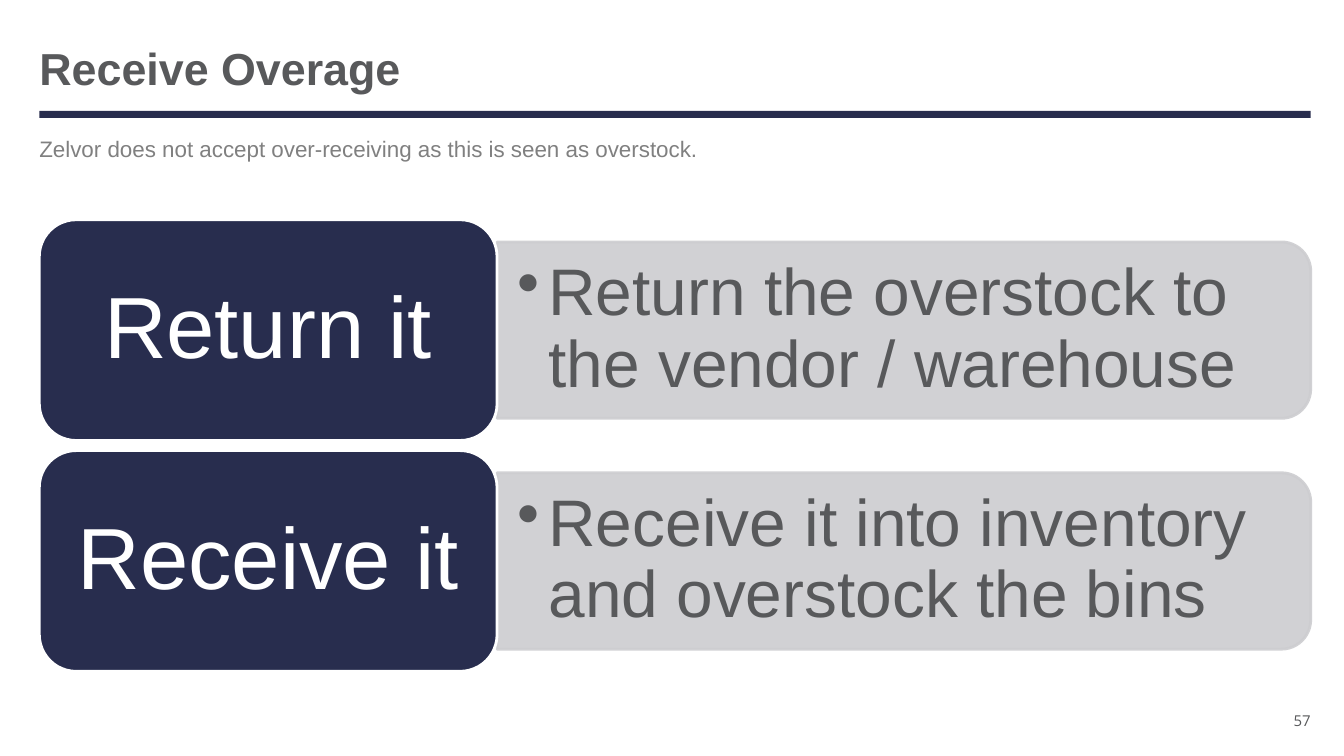
from lxml.etree import SubElement
from pptx import Presentation
from pptx.dml.color import RGBColor
from pptx.enum.shapes import MSO_SHAPE as Preset
from pptx.enum.text import MSO_ANCHOR as Anchor, PP_ALIGN as Align
from pptx.oxml.ns import qn
from pptx.util import Inches, Pt

TITLE = "Receive Overage"
SUBTITLE = "Zelvor does not accept over-receiving as this is seen as overstock."
PAGE = "57"
OPTIONS = [
    ("Return it", "Return the overstock to the vendor / warehouse"),
    ("Receive it", "Receive it into inventory and overstock the bins"),
]

NAVY, SLATE, GREY, SILVER, WHITE = "282D4E", "58595B", "808080", "CDCDD0", "FFFFFF"
LEFT, WIDTH = 0.39, 12.61
FIRST_TOP, PITCH = 2.18, 2.29
CHOICE_W, CHOICE_H = 4.54, 2.19
BAND_W, BAND_H = 8.07, 1.75
DETAIL_W, DETAIL_H = 7.98, 1.58

TITLE_FORMAT = {"size": Pt(32), "name": "Arial", "bold": True}
SUBTITLE_FORMAT = {"size": Pt(16), "name": "Arial"}
PAGE_FORMAT = {"size": Pt(10.7), "name": "Open Sans"}
CHOICE_FORMAT = {"size": Pt(62), "name": "Arial"}
DETAIL_FORMAT = {"size": Pt(47), "name": "Arial"}


def paint(color_format, color):
    color_format.rgb = RGBColor.from_string(color)


def write(shape, text, font, color, inset=(0, 0), anchor=Anchor.MIDDLE, **layout):
    frame = shape.text_frame
    across, down = map(Inches, inset)
    margins = {"margin_left": across, "margin_right": across,
               "margin_top": down, "margin_bottom": down}
    for key, value in {"word_wrap": True, "vertical_anchor": anchor, **margins}.items():
        setattr(frame, key, value)
    paragraph = frame.paragraphs[0]
    for key, value in {"alignment": Align.LEFT, **layout}.items():
        setattr(paragraph, key, value)
    run = paragraph.add_run()
    run.text = text
    for key, value in font.items():
        setattr(run.font, key, value)
    paint(run.font.color, color)
    return paragraph


def add_box(*box):
    return slide.shapes.add_textbox(*map(Inches, box))


def add_block(preset, box, fill, line=None):
    block = slide.shapes.add_shape(preset, *map(Inches, box))
    block.shadow.inherit = False
    block.fill.solid()
    paint(block.fill.fore_color, fill)
    if line:
        block.line.width = Pt(2)
        paint(block.line.color, line)
    else:
        block.line.fill.background()
    return block


def add_band(center):
    left = LEFT + CHOICE_W + (BAND_W - BAND_H) / 2
    box = (left, center - BAND_W / 2, BAND_H, BAND_W)
    band = add_block(Preset.ROUND_2_SAME_RECTANGLE, box, SILVER, SILVER)
    band.rotation = 90
    for tint in band._element.spPr.iter(qn("a:srgbClr")):
        SubElement(tint, qn("a:alpha"), val="90000")


def add_detail(center, text):
    box = add_box(LEFT + CHOICE_W, center - DETAIL_H / 2, DETAIL_W, DETAIL_H)
    paragraph = write(box, text, DETAIL_FORMAT, SLATE, (0.2, 0.1), line_spacing=0.9)
    indents = paragraph._p.get_or_add_pPr()
    indents.set("marL", str(Inches(0.31)))
    indents.set("indent", str(Inches(-0.31)))
    SubElement(indents, qn("a:buChar"), char="•")


deck = Presentation()
deck.slide_width, deck.slide_height = Inches(13.33), Inches(7.5)
slide = deck.slides.add_slide(deck.slide_layouts[6])

add_block(Preset.RECTANGLE, (LEFT, 1.1, WIDTH, 0.07), NAVY)
write(add_box(LEFT, 0.41, WIDTH, 0.61), TITLE, TITLE_FORMAT, SLATE, (0, 0.05),
      line_spacing=0.85)
write(add_box(LEFT, 1.29, WIDTH, 0.71), SUBTITLE, SUBTITLE_FORMAT, GREY, (0, 0.05),
      Anchor.TOP, space_before=Pt(2.7))
write(add_box(12.5, 6.92, 0.5, 0.46), PAGE, PAGE_FORMAT, SLATE, alignment=Align.RIGHT)

for row, (choice, detail) in enumerate(OPTIONS):
    top = FIRST_TOP + row * PITCH
    center = top + CHOICE_H / 2
    add_band(center)
    add_detail(center, detail)
    label = add_block(Preset.ROUNDED_RECTANGLE, (LEFT, top, CHOICE_W, CHOICE_H), NAVY, WHITE)
    write(label, choice, CHOICE_FORMAT, WHITE, (0.26, 0.13),
          alignment=Align.CENTER, line_spacing=0.9)

deck.save("out.pptx")
